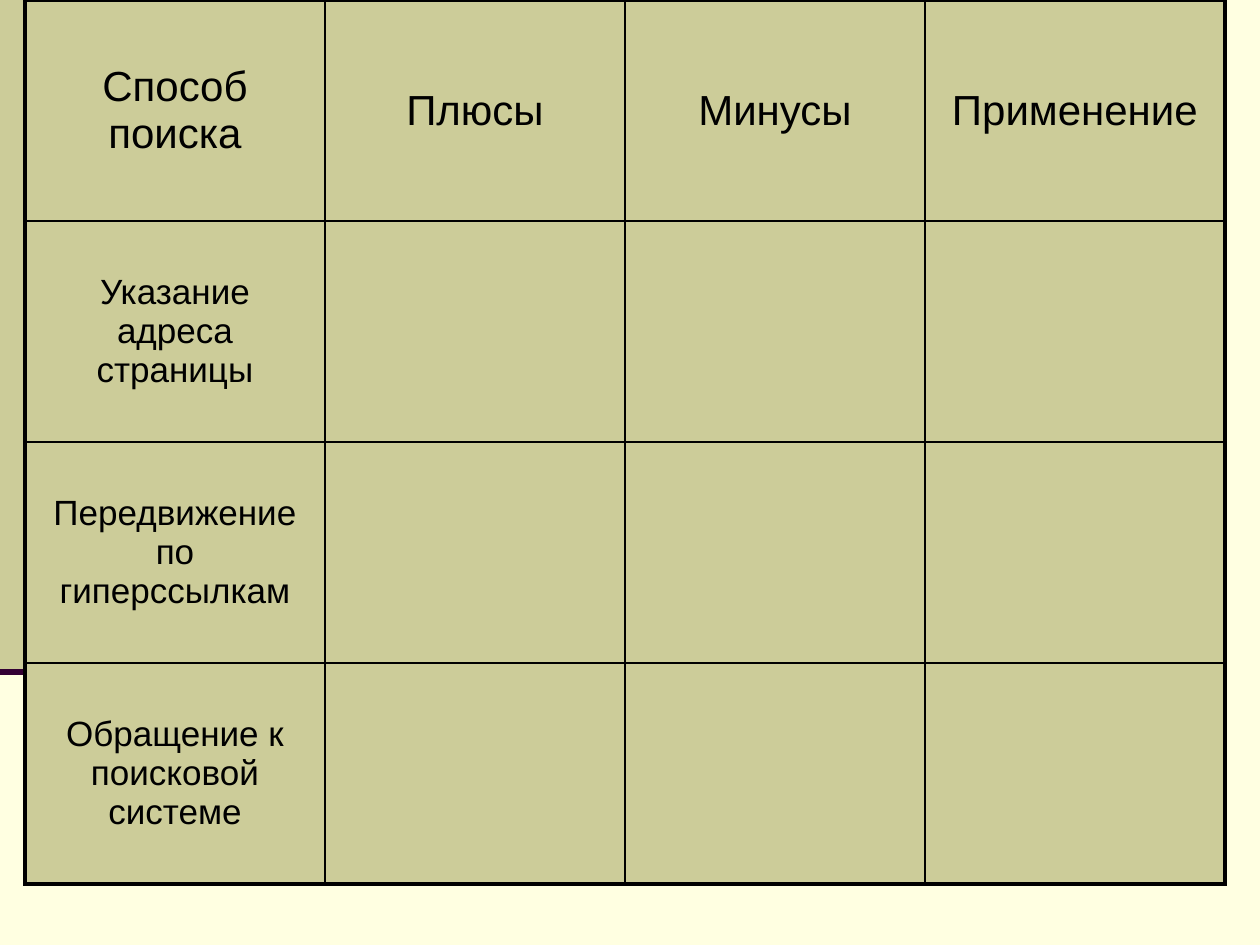
from lxml import etree
from pptx import Presentation
from pptx.dml.color import RGBColor
from pptx.enum.shapes import MSO_CONNECTOR, MSO_SHAPE
from pptx.enum.text import MSO_ANCHOR, PP_ALIGN
from pptx.oxml import parse_xml
from pptx.oxml.ns import qn
from pptx.util import Pt

PX = 914400 / 126
CREAM = RGBColor(0xFF, 0xFF, 0xE1)
OLIVE = RGBColor(0xCC, 0xCC, 0x99)
PLUM = RGBColor(0x33, 0x00, 0x33)
BLACK = RGBColor(0x00, 0x00, 0x00)
RECTANGLE = MSO_SHAPE.RECTANGLE
STRAIGHT = MSO_CONNECTOR.STRAIGHT
CENTER = PP_ALIGN.CENTER
MIDDLE = MSO_ANCHOR.MIDDLE
NAMESPACE = "http://schemas.openxmlformats.org/drawingml/2006/main"

COLUMN_WIDTH = 300
ROW_HEIGHT = 221
THIN, THICK = 1, 2.25
HEADINGS = ["Способ поиска", "Плюсы", "Минусы", "Применение"]
METHODS = [
    "Указание адреса страницы",
    "Передвижение по гиперссылкам",
    "Обращение к поисковой системе",
]
ROWS = [HEADINGS] + [[method, "", "", ""] for method in METHODS]


def px(length):
    return round(length * PX)


def write_text(cell, text, size=20, color=BLACK, font="Arial", align=CENTER):
    paragraph = cell.text_frame.paragraphs[0]
    paragraph.alignment = align
    run = paragraph.add_run()
    run.text = text
    run.font.size = Pt(size)
    run.font.name = font
    run.font.color.rgb = color


presentation = Presentation()
presentation.slide_width = px(1260)
presentation.slide_height = px(945)
slide = presentation.slides.add_slide(presentation.slide_layouts[6])
slide.background.fill.solid()
slide.background.fill.fore_color.rgb = CREAM

side_band = slide.shapes.add_shape(RECTANGLE, 0, 0, px(84), px(672))
side_band.shadow.inherit = False
side_band.fill.solid()
side_band.fill.fore_color.rgb = OLIVE
side_band.line.fill.background()

band_rule = slide.shapes.add_connector(STRAIGHT, 0, px(672), px(84), px(672))
band_rule.line.color.rgb = PLUM
band_rule.line.width = Pt(3.5)
etree.SubElement(band_rule.element.spPr, qn("a:effectLst"))

last_row = len(ROWS) - 1
last_column = len(HEADINGS) - 1
table = slide.shapes.add_table(
    len(ROWS), len(HEADINGS), px(25), 0,
    px(COLUMN_WIDTH * len(HEADINGS)), px(ROW_HEIGHT * len(ROWS)),
).table
table.first_row = False
table.horz_banding = False
for column in table.columns:
    column.width = px(COLUMN_WIDTH)
for row in table.rows:
    row.height = px(ROW_HEIGHT)

for row_index, texts in enumerate(ROWS):
    for column_index, text in enumerate(texts):
        cell = table.cell(row_index, column_index)
        cell.vertical_anchor = MIDDLE
        if text:
            write_text(cell, text, size=24 if row_index == 0 else 20)
        outer_edges = {
            "lnL": column_index == 0,
            "lnR": column_index == last_column,
            "lnT": row_index == 0,
            "lnB": row_index == last_row,
        }
        properties = cell._tc.get_or_add_tcPr()
        for edge, is_outer in outer_edges.items():
            width = Pt(THICK if is_outer else THIN)
            properties.append(parse_xml(
                f'<a:{edge} xmlns:a="{NAMESPACE}" w="{width}"><a:solidFill>'
                f'<a:srgbClr val="{BLACK}"/></a:solidFill></a:{edge}>'
            ))
        cell.fill.solid()
        cell.fill.fore_color.rgb = OLIVE

presentation.save("out.pptx")
